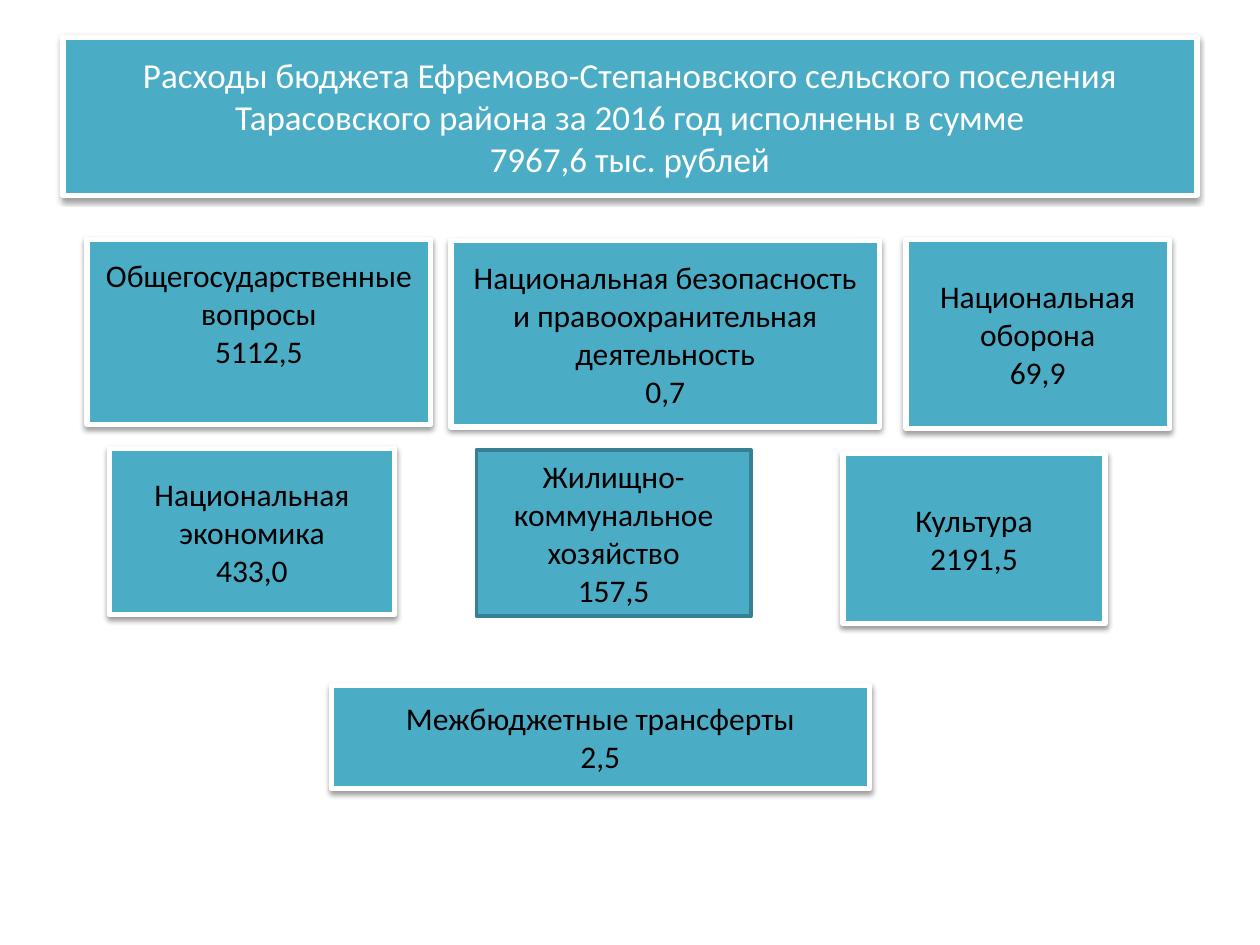
from dataclasses import dataclass

from lxml import etree
from pptx import Presentation
from pptx.dml.color import RGBColor
from pptx.enum.shapes import MSO_SHAPE
from pptx.enum.text import MSO_ANCHOR, MSO_AUTO_SIZE, PP_ALIGN
from pptx.oxml.ns import qn
from pptx.util import Inches, Pt

RECT = MSO_SHAPE.RECTANGLE
MIDDLE = MSO_ANCHOR.MIDDLE
CENTER = PP_ALIGN.CENTER
NO_AUTOFIT = MSO_AUTO_SIZE.NONE
TITLE_ONLY = 5


@dataclass(frozen=True)
class Theme:
    font: str = "Calibri"
    fill: str = "4BACC6"
    light: str = "FFFFFF"
    dark: str = "000000"
    outline: str = "377F92"
    title_size: int = 20
    body_size: int = 18
    border: int = 3
    thin_border: int = 2


class BudgetSlide:
    def __init__(self, prs, theme):
        self.theme = theme
        self.slide = prs.slides.add_slide(prs.slide_layouts[TITLE_ONLY])

    def title(self, text, box):
        sp = self.slide.shapes.title
        sp.left, sp.top, sp.width, sp.height = map(Inches, box)
        self.paint(sp)
        self.set_text(sp, text, self.theme.title_size, self.theme.light)

    def card(self, name, amount, box, raised=True, bottom=0.05):
        sp = self.slide.shapes.add_shape(RECT, *map(Inches, box))
        self.paint(sp, raised)
        self.set_text(sp, f"{name}\n{amount}", self.theme.body_size, self.theme.dark)
        sp.text_frame.margin_bottom = Inches(bottom)

    def paint(self, sp, raised=True):
        t = self.theme
        sp.fill.solid()
        sp.fill.fore_color.rgb = RGBColor.from_string(t.fill)
        sp.line.color.rgb = RGBColor.from_string(t.light if raised else t.outline)
        sp.line.width = Pt(t.border if raised else t.thin_border)
        sp.shadow.inherit = False
        if raised:
            self.cast_shadow(sp)

    def cast_shadow(self, sp):
        effects = sp.element.spPr.find(qn("a:effectLst"))
        shadow = etree.SubElement(
            effects, qn("a:outerShdw"), blurRad=str(Pt(3.1)),
            dist=str(Pt(1.6)), dir=str(90 * 60000), rotWithShape="0")
        color = etree.SubElement(shadow, qn("a:srgbClr"), val=self.theme.dark)
        etree.SubElement(color, qn("a:alpha"), val="38000")

    def set_text(self, sp, text, size, color):
        tf = sp.text_frame
        tf.text = text
        tf.word_wrap = True
        tf.auto_size = NO_AUTOFIT
        tf.vertical_anchor = MIDDLE
        for p in tf.paragraphs:
            p.alignment = CENTER
            for r in p.runs:
                r.font.name = self.theme.font
                r.font.size = Pt(size)
                r.font.color.rgb = RGBColor.from_string(color)


def main():
    prs = Presentation()
    prs.slide_width, prs.slide_height = Inches(10), Inches(7.5)
    s = BudgetSlide(prs, Theme())
    s.title("Расходы бюджета Ефремово-Степановского сельского поселения "
            "Тарасовского района за 2016 год исполнены в сумме\v"
            "7967,6 тыс. рублей", (0.5, 0.3, 9, 1.25))
    s.card("Общегосударственные вопросы", "5112,5",
           (0.69, 1.9, 2.73, 1.47), bottom=0.35)
    s.card("Национальная безопасность и правоохранительная деятельность",
           "0,7", (3.58, 1.91, 3.4, 1.48))
    s.card("Национальная оборона", "69,9", (7.19, 1.9, 2.09, 1.5))
    s.card("Жилищно-коммунальное хозяйство", "157,5",
           (3.78, 3.57, 2.18, 1.32), raised=False)
    s.card("Культура", "2191,5", (6.69, 3.6, 2.08, 1.35))
    s.card("Межбюджетные трансферты", "2,5", (2.63, 5.44, 4.27, 0.82))
    s.card("Национальная экономика", "433,0", (0.87, 3.56, 2.26, 1.32))
    prs.save("out.pptx")


if __name__ == "__main__":
    main()
